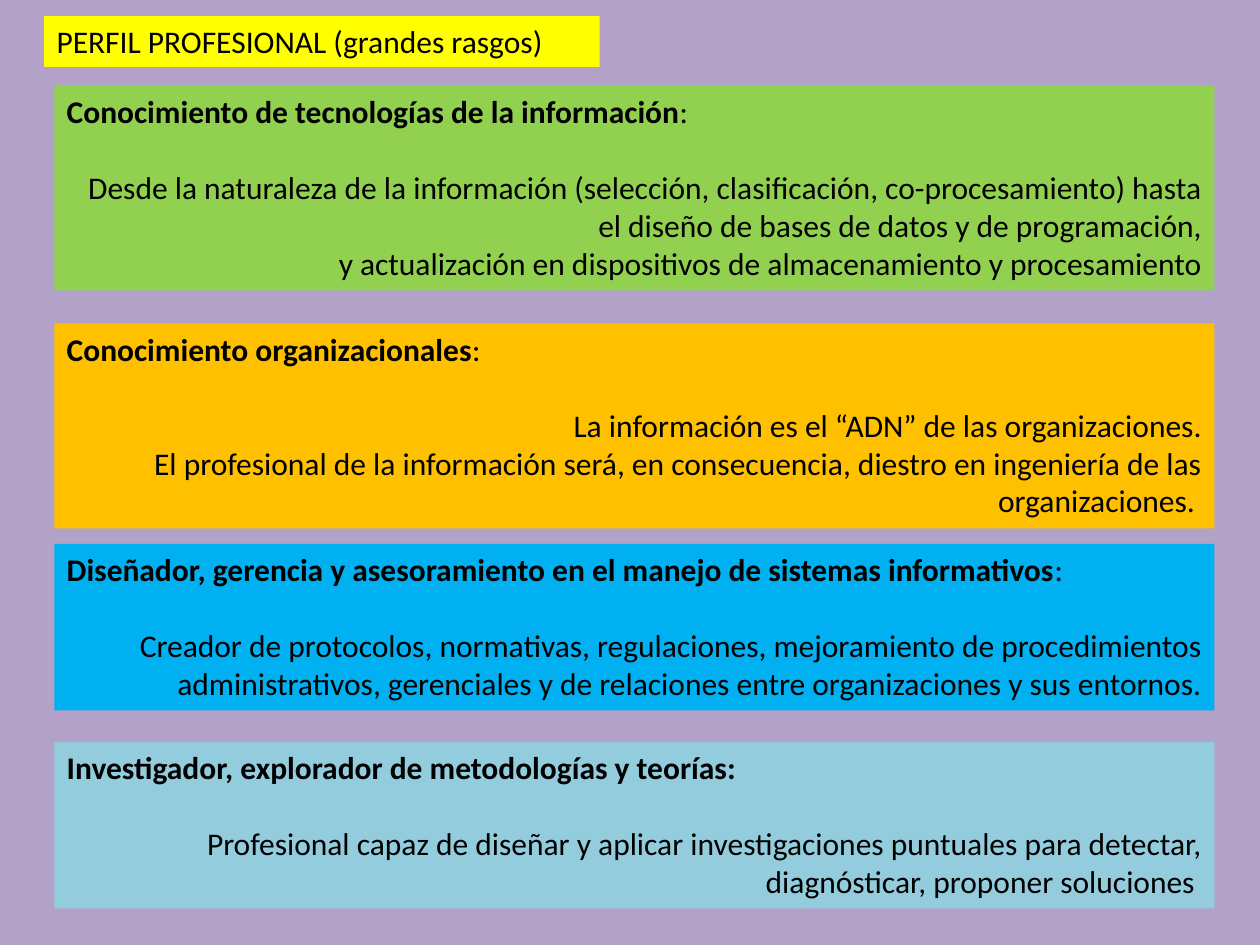
import pptx
import pptx.dml.color
import pptx.enum.shapes
import pptx.enum.text
import pptx.util

Pt = pptx.util.Pt
Align = pptx.enum.text.PP_ALIGN

COLORS = {
    "background": "B3A2C7",
    "text": "000000",
    "title": "FFFF00",
    "technology": "92D050",
    "organization": "FFC000",
    "design": "00B0F0",
    "research": "93CDDD",
}
CARD_LEFT, CARD_WIDTH = 31, 663
LINE_HEIGHT = 22
PADDING = 3.6

# colour, top, number of lines, bold heading, plain heading ending, body paragraphs
CARDS = [
    ("technology", 48.8, 5, "Conocimiento de tecnologías de la información", ":", [
        "Desde la naturaleza de la información (selección, clasificación, "
        "co-procesamiento) hasta el diseño de bases de datos y de programación,",
        "y actualización en dispositivos de almacenamiento y procesamiento",
    ]),
    ("organization", 184.8, 5, "Conocimiento organizacionales", ":", [
        "La información es el “ADN” de las organizaciones.",
        "El profesional de la información será, en consecuencia, "
        "diestro en ingeniería de las organizaciones. ",
    ]),
    ("design", 310.8, 4,
     "Diseñador, gerencia y asesoramiento en el manejo de sistemas informativos", ":", [
         "Creador de protocolos, normativas, regulaciones, mejoramiento de procedimientos "
         "administrativos, gerenciales y de relaciones entre organizaciones y sus entornos.",
     ]),
    ("research", 424, 4, "Investigador, explorador de metodologías y teorías:", "", [
        "Profesional capaz de diseñar y aplicar investigaciones puntuales para detectar, "
        "diagnósticar, proponer soluciones ",
    ]),
]


class SlideBuilder:
    font = "Calibri"
    size = 18

    def __init__(self, slide):
        self.slide = slide

    def color(self, name):
        return pptx.dml.color.RGBColor.from_string(COLORS[name])

    def background(self, name):
        fill = self.slide.background.fill
        fill.solid()
        fill.fore_color.rgb = self.color(name)

    def box(self, name, left, top, width, height):
        """Add a borderless filled rectangle and return its text frame."""
        box = self.slide.shapes.add_shape(
            pptx.enum.shapes.MSO_SHAPE.RECTANGLE,
            Pt(left), Pt(top), Pt(width), Pt(height))
        box.shadow.inherit = False
        box.fill.solid()
        box.fill.fore_color.rgb = self.color(name)
        box.line.fill.background()
        frame = box.text_frame
        frame.word_wrap = True
        frame.vertical_anchor = pptx.enum.text.MSO_ANCHOR.TOP
        return frame

    def span(self, para, text, bold=False):
        span = para.add_run()
        span.text = text
        span.font.name = self.font
        span.font.size = Pt(self.size)
        span.font.bold = bold
        span.font.color.rgb = self.color("text")

    def title(self, text, left, top, width, height):
        para = self.box("title", left, top, width, height).paragraphs[0]
        para.alignment = Align.LEFT
        self.span(para, text)

    def card(self, name, top, lines, heading, ending, body):
        height = lines * LINE_HEIGHT + 2 * PADDING
        frame = self.box(name, CARD_LEFT, top, CARD_WIDTH, height)
        para = frame.paragraphs[0]
        para.alignment = Align.LEFT
        para.space_after = Pt(LINE_HEIGHT)
        self.span(para, heading, bold=True)
        if ending:
            self.span(para, ending)
        for text in body:
            para = frame.add_paragraph()
            para.alignment = Align.RIGHT
            self.span(para, text)


def main():
    deck = pptx.Presentation()
    deck.slide_width, deck.slide_height = Pt(720), Pt(540)
    page = SlideBuilder(deck.slides.add_slide(deck.slide_layouts[6]))
    page.background("background")
    page.title("PERFIL PROFESIONAL (grandes rasgos)", 25.2, 9.2, 317.5, 29)
    for card in CARDS:
        page.card(*card)
    deck.save("out.pptx")


if __name__ == "__main__":
    main()
